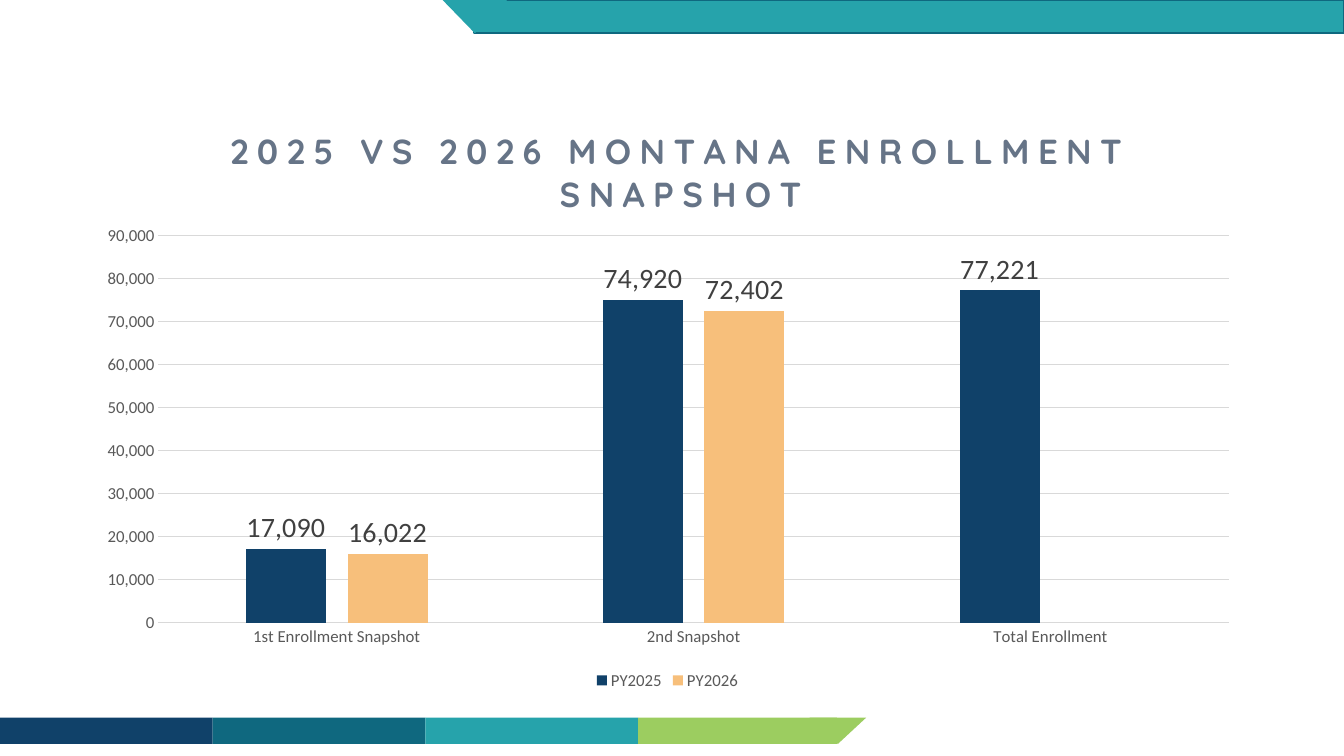
from lxml.etree import SubElement
from pptx import Presentation
from pptx.chart.data import CategoryChartData
from pptx.dml.color import RGBColor
from pptx.enum.chart import XL_CHART_TYPE, XL_LABEL_POSITION, XL_LEGEND_POSITION, XL_TICK_MARK
from pptx.enum.shapes import MSO_SHAPE
from pptx.oxml import parse_xml
from pptx.oxml.ns import nsdecls, qn
from pptx.util import Inches, Pt

COLORS = {
    "navy": "104169", "petrol": "0F687F", "teal": "26A3AB", "green": "9CCD60",
    "apricot": "F7BF7B", "title": "667487", "axis": "595959", "label": "404040", "grid": "D9D9D9",
}
BAND_TOP, BAND_HEIGHT, BAND_COLUMN = 7.12, 0.26, 2.11
HEADER_HEIGHT = 0.33
NUMBER_FORMAT = "#,##0"


def color(name):
    """Return the palette colour called name."""
    return RGBColor.from_string(COLORS[name])


def format_font(font, size, tint, face="Calibri", bold=False):
    """Apply size, colour, face and weight to a font."""
    font.size, font.name, font.bold = Pt(size), face, bold
    font.color.rgb = color(tint)


def write_text(frame, text, spacing=0, **style):
    """Write one formatted, letter-spaced run into a text frame."""
    run = frame.paragraphs[0].add_run()
    run.text = text
    format_font(run.font, **style)
    run.font._element.set("spc", str(spacing * 100))


def add_block(slide, left, top, width, height, fill, border=None, preset=MSO_SHAPE.RECTANGLE, rotation=0):
    """Draw a flat preset shape, measured in inches."""
    block = slide.shapes.add_shape(preset, *map(Inches, (left, top, width, height)))
    block.shadow.inherit = False
    block.rotation = rotation
    block.fill.solid()
    block.fill.fore_color.rgb = color(fill)
    if border:
        block.line.color.rgb = color(border)
        block.line.width = Pt(1)
    else:
        block.line.fill.background()


def add_bands(slide):
    """Draw the footer strip and the header strip with their slanted ends."""
    slant = {"preset": MSO_SHAPE.ISOSCELES_TRIANGLE, "rotation": 180}
    for column, fill in enumerate(("navy", "petrol", "teal")):
        add_block(slide, column * BAND_COLUMN, BAND_TOP, BAND_COLUMN, BAND_HEIGHT, fill)
    add_block(slide, 3 * BAND_COLUMN, BAND_TOP, 1.97, BAND_HEIGHT, "green")
    add_block(slide, 8.03, BAND_TOP, 0.56, BAND_HEIGHT, "green", **slant)
    add_block(slide, 4.7, 0, 8.63, HEADER_HEIGHT, "teal", border="petrol")
    add_block(slide, 4.39, 0, 0.64, HEADER_HEIGHT, "teal", **slant)


def place_part(part, index, target=None, **shares):
    """Fix the place of a chart part in shares of the chart area."""
    for previous in part.findall(qn("c:layout")):
        part.remove(previous)
    layout = parse_xml(f"<c:layout {nsdecls('c')}><c:manualLayout/></c:layout>")
    settings = {"layoutTarget": target} if target else {}
    settings.update(xMode="edge", yMode="edge", **shares)
    for tag, value in settings.items():
        SubElement(layout[0], qn(f"c:{tag}"), val=str(value))
    part.insert(index, layout)


def format_axis(axis, line=None):
    """Give an axis its text, line and hidden tick marks."""
    format_font(axis.tick_labels.font, 12, "axis")
    axis.major_tick_mark = axis.minor_tick_mark = XL_TICK_MARK.NONE
    if line:
        axis.format.line.color.rgb = color(line)
        axis.format.line.width = Pt(0.75)
    else:
        axis.format.line.fill.background()


def format_series(series, fill):
    """Fill the columns and label them with their values."""
    series.format.fill.solid()
    series.format.fill.fore_color.rgb = color(fill)
    labels = series.data_labels
    labels.show_value = True
    labels.position = XL_LABEL_POSITION.OUTSIDE_END
    labels.number_format, labels.number_format_is_linked = NUMBER_FORMAT, False
    format_font(labels.font, 20, "label")


def add_enrollment_chart(slide):
    """Add the clustered columns that compare both plan years."""
    enrollment = CategoryChartData(number_format=NUMBER_FORMAT)
    enrollment.categories = ["1st Enrollment Snapshot", "2nd Snapshot", "Total Enrollment"]
    enrollment.add_series("PY2025", (17090, 74920, 77221))
    enrollment.add_series("PY2026", (16022, 72402, None))
    chart = slide.shapes.add_chart(
        XL_CHART_TYPE.COLUMN_CLUSTERED, *map(Inches, (0.83, 0.88, 11.58, 6.01)), enrollment).chart
    format_font(chart.font, 10, "axis")

    chart.has_title = True
    heading = chart.chart_title
    write_text(heading.text_frame, "2025 VS 2026 MONTANA ENROLLMENT SNAPSHOT",
               spacing=6, size=24.8, tint="title", face="Quicksand", bold=True)
    place_part(heading._element, 1, x=0.12, y=0.05)
    place_part(chart._chartSpace.chart.plotArea, 0, "inner", x=0.064, y=0.242, w=0.917, h=0.64)

    format_axis(chart.category_axis, line="grid")
    counts = chart.value_axis
    format_axis(counts)
    counts.minimum_scale, counts.maximum_scale, counts.major_unit = 0, 90000, 10000
    counts.tick_labels.number_format = NUMBER_FORMAT
    counts.tick_labels.number_format_is_linked = False
    counts.major_gridlines.format.line.color.rgb = color("grid")
    counts.major_gridlines.format.line.width = Pt(0.75)

    columns = chart.plots[0]
    columns.gap_width, columns.overlap, columns.vary_by_categories = 219, -27, False
    for series, fill in zip(columns.series, ("navy", "apricot")):
        format_series(series, fill)

    chart.has_legend = True
    chart.legend.position = XL_LEGEND_POSITION.BOTTOM
    chart.legend.include_in_layout = False
    format_font(chart.legend.font, 12, "axis")


def main():
    """Build the enrollment slide and save it."""
    deck = Presentation()
    deck.slide_width, deck.slide_height = Inches(13.33), Inches(7.5)
    slide = deck.slides.add_slide(deck.slide_layouts[6])
    add_bands(slide)
    add_enrollment_chart(slide)
    deck.save("out.pptx")


if __name__ == "__main__":
    main()
